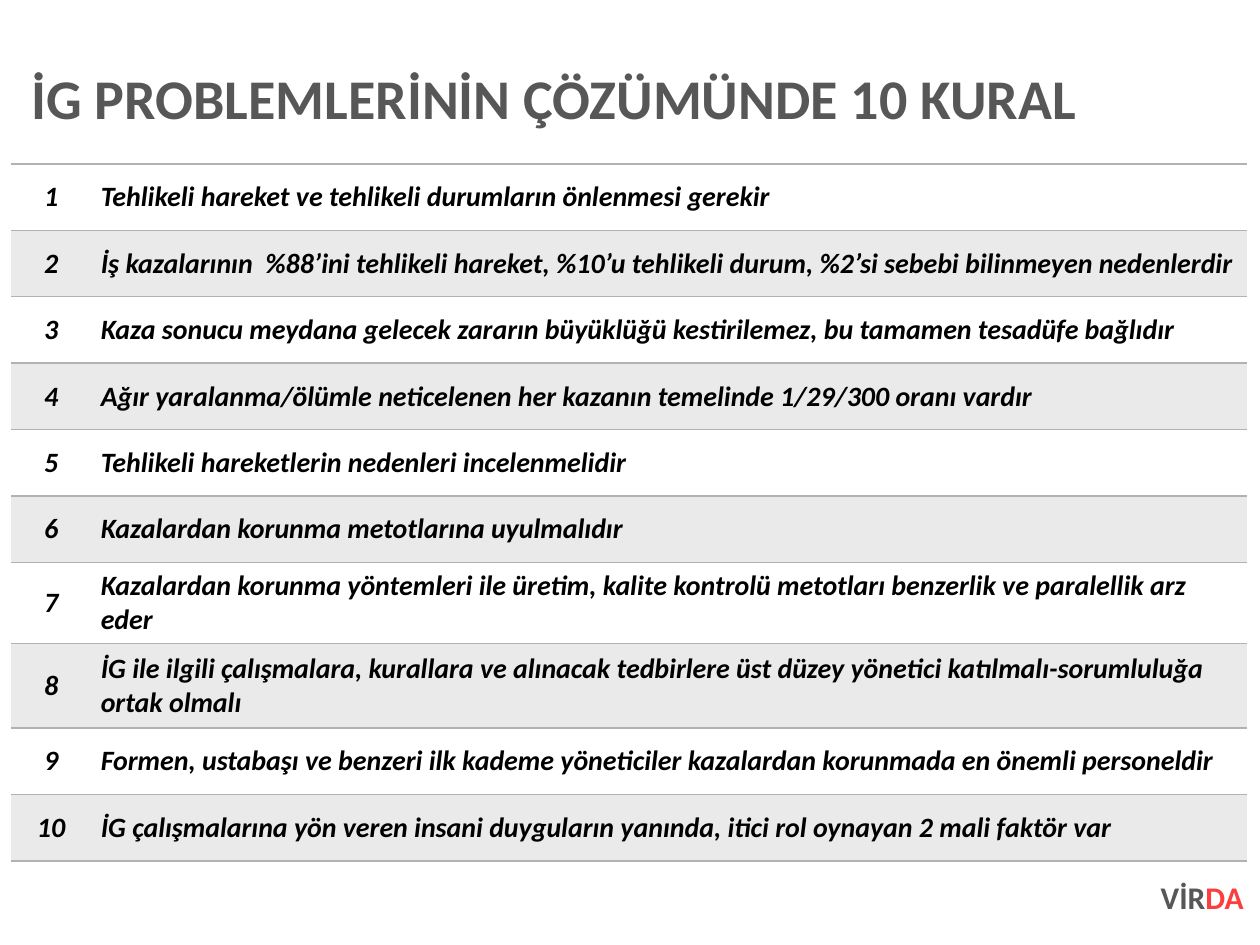
from lxml.etree import SubElement
from pptx import Presentation
from pptx.dml.color import RGBColor
from pptx.enum.text import MSO_ANCHOR, MSO_AUTO_SIZE, PP_ALIGN
from pptx.oxml.ns import qn
from pptx.util import Inches, Pt

FONT = "Calibri"
GREY = RGBColor(0x57, 0x57, 0x57)
RED = RGBColor(0xFB, 0x3E, 0x3E)
BLACK = RGBColor(0x00, 0x00, 0x00)
WHITE = RGBColor(0xFF, 0xFF, 0xFF)
BAND = RGBColor(0xEA, 0xEA, 0xEA)
RULE_LINE = RGBColor(0xB2, 0xB2, 0xB2)

RULES = [
    "Tehlikeli hareket ve tehlikeli durumların önlenmesi gerekir",
    "İş kazalarının  %88’ini tehlikeli hareket, %10’u tehlikeli durum, "
    "%2’si sebebi bilinmeyen nedenlerdir",
    "Kaza sonucu meydana gelecek zararın büyüklüğü kestirilemez, bu tamamen tesadüfe bağlıdır",
    "Ağır yaralanma/ölümle neticelenen her kazanın temelinde 1/29/300 oranı vardır",
    "Tehlikeli hareketlerin nedenleri incelenmelidir",
    "Kazalardan korunma metotlarına uyulmalıdır",
    "Kazalardan korunma yöntemleri ile üretim, kalite kontrolü metotları "
    "benzerlik ve paralellik arz eder",
    "İG ile ilgili çalışmalara, kurallara ve alınacak tedbirlere üst düzey yönetici "
    "katılmalı-sorumluluğa ortak olmalı",
    "Formen, ustabaşı ve benzeri ilk kademe yöneticiler kazalardan korunmada "
    "en önemli personeldir",
    "İG çalışmalarına yön veren insani duyguların yanında, itici rol oynayan 2 mali faktör var",
]
ROW_HEIGHT = 38 / 72
TALL_ROWS = {8: 0.67}


class SlideBuilder:
    """Adds styled elements to one slide."""

    def __init__(self, slide):
        self.slide = slide

    def add_span(self, para, text, size, color, italic=False):
        span = para.add_run()
        span.text = text
        span.font.name = FONT
        span.font.size = Pt(size)
        span.font.bold = True
        span.font.italic = italic
        span.font.color.rgb = color

    def set_frame(self, frame, side, vertical, anchor):
        frame.word_wrap = True
        frame.auto_size = MSO_AUTO_SIZE.NONE
        frame.margin_left = frame.margin_right = Inches(side)
        frame.margin_top = frame.margin_bottom = Inches(vertical)
        frame.vertical_anchor = anchor

    def add_title(self, text, left, top, width, height):
        title = self.slide.shapes.title
        title.left, title.top = Inches(left), Inches(top)
        title.width, title.height = Inches(width), Inches(height)
        self.set_frame(title.text_frame, 0, 0.05, MSO_ANCHOR.MIDDLE)
        para = title.text_frame.paragraphs[0]
        para.alignment = PP_ALIGN.LEFT
        para.line_spacing = 0.9
        self.add_span(para, text, 32, GREY)

    def add_label(self, spans, left, top, width, height):
        box = self.slide.shapes.add_textbox(
            Inches(left), Inches(top), Inches(width), Inches(height))
        self.set_frame(box.text_frame, 0, 0, MSO_ANCHOR.TOP)
        para = box.text_frame.paragraphs[0]
        para.alignment = PP_ALIGN.RIGHT
        for text, color in spans:
            self.add_span(para, text, 18, color)

    def set_borders(self, cell):
        properties = cell._tc.get_or_add_tcPr()
        for side in ("a:lnL", "a:lnR"):
            SubElement(SubElement(properties, qn(side), w="0"), qn("a:noFill"))
        for side in ("a:lnT", "a:lnB"):
            line = SubElement(properties, qn(side), w=str(Pt(1)))
            fill = SubElement(line, qn("a:solidFill"))
            SubElement(fill, qn("a:srgbClr"), val=str(RULE_LINE))

    def fill_cell(self, cell, text, color, alignment):
        self.set_borders(cell)
        cell.fill.solid()
        cell.fill.fore_color.rgb = color
        cell.vertical_anchor = MSO_ANCHOR.MIDDLE
        cell.margin_right = Inches(0.08)
        para = cell.text_frame.paragraphs[0]
        para.alignment = alignment
        self.add_span(para, text, 16, BLACK, italic=True)

    def add_numbered_table(self, rules, left, top, column_widths):
        heights = [TALL_ROWS.get(number, ROW_HEIGHT) for number in range(1, len(rules) + 1)]
        table = self.slide.shapes.add_table(
            len(rules), 2, Inches(left), Inches(top),
            Inches(sum(column_widths)), Inches(sum(heights))).table
        table.first_row = table.horz_banding = False
        for column, width in zip(table.columns, column_widths):
            column.width = Inches(width)
        for index, (rule, height) in enumerate(zip(rules, heights)):
            table.rows[index].height = Inches(height)
            color = BAND if index % 2 else WHITE
            self.fill_cell(table.cell(index, 0), str(index + 1), color, PP_ALIGN.CENTER)
            self.fill_cell(table.cell(index, 1), rule, color, PP_ALIGN.LEFT)


def main():
    deck = Presentation()
    deck.slide_width, deck.slide_height = Inches(10), Inches(7.5)
    page = SlideBuilder(deck.slides.add_slide(deck.slide_layouts[5]))
    page.add_numbered_table(RULES, 0.09, 1.3, (0.61, 9.2))
    page.add_title("İG PROBLEMLERİNİN ÇÖZÜMÜNDE 10 KURAL", 0.25, 0.45, 9.64, 0.71)
    page.add_label([("VİR", GREY), ("DA", RED)], 9.15, 6.97, 0.72, 0.5)
    deck.save("out.pptx")


if __name__ == "__main__":
    main()
